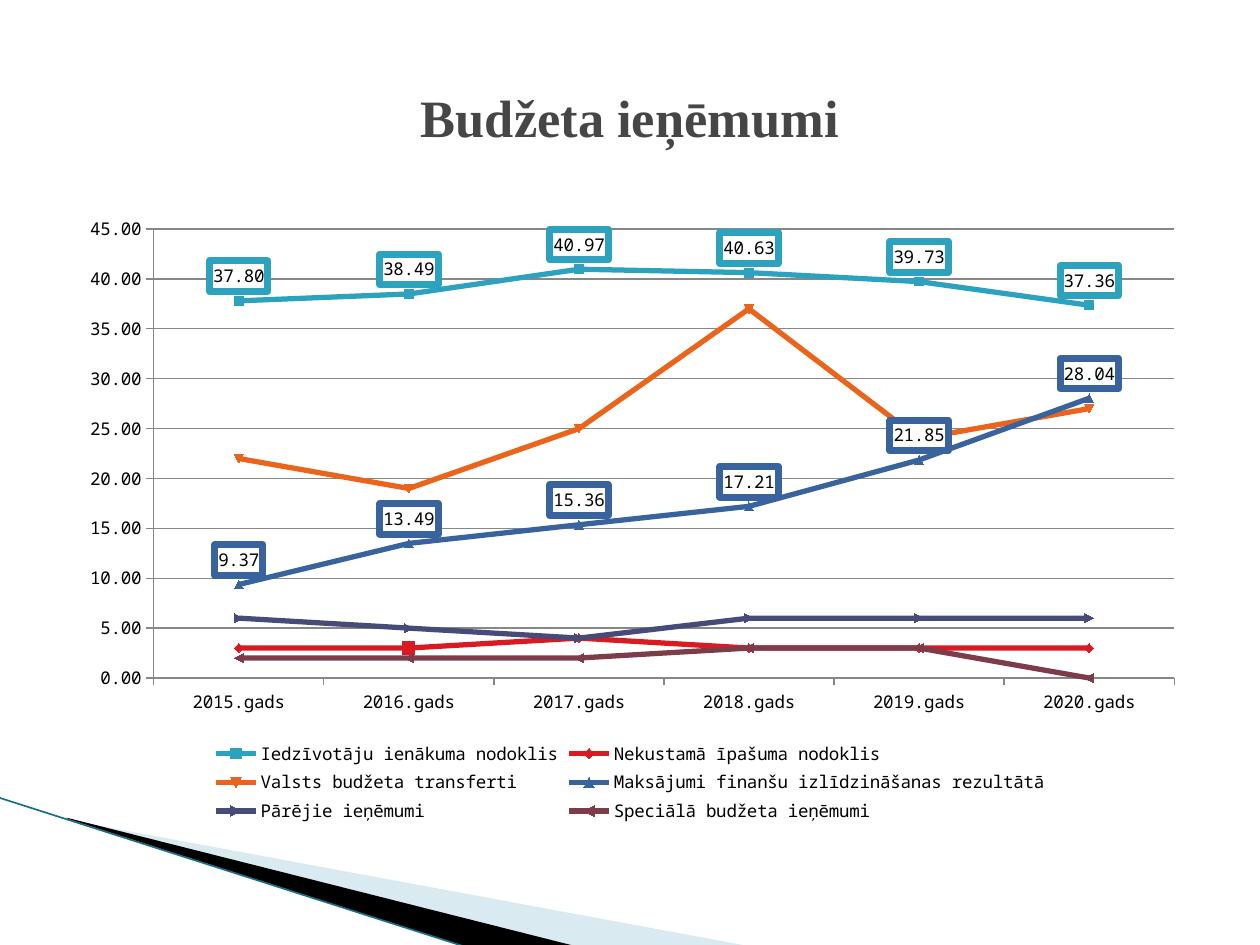
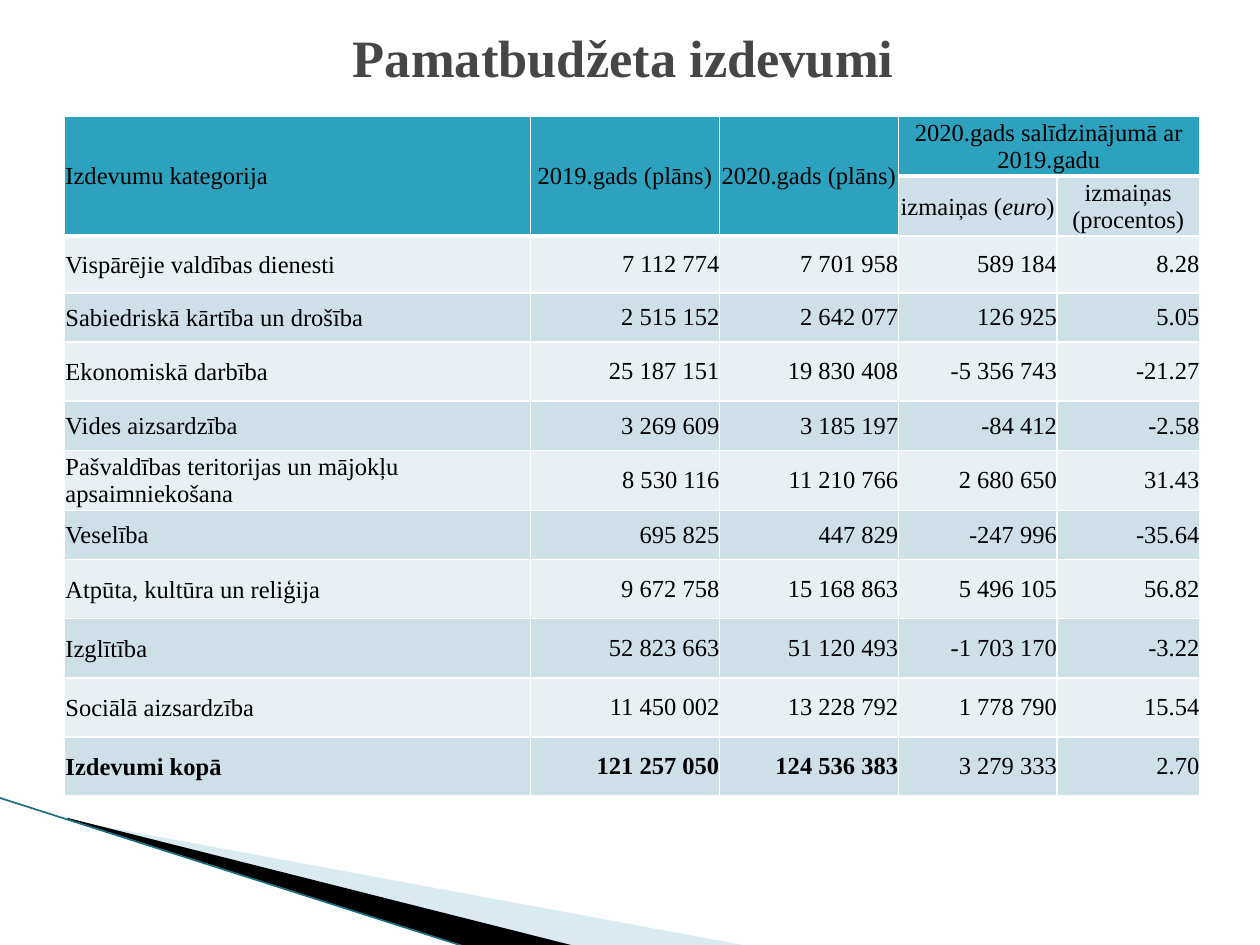
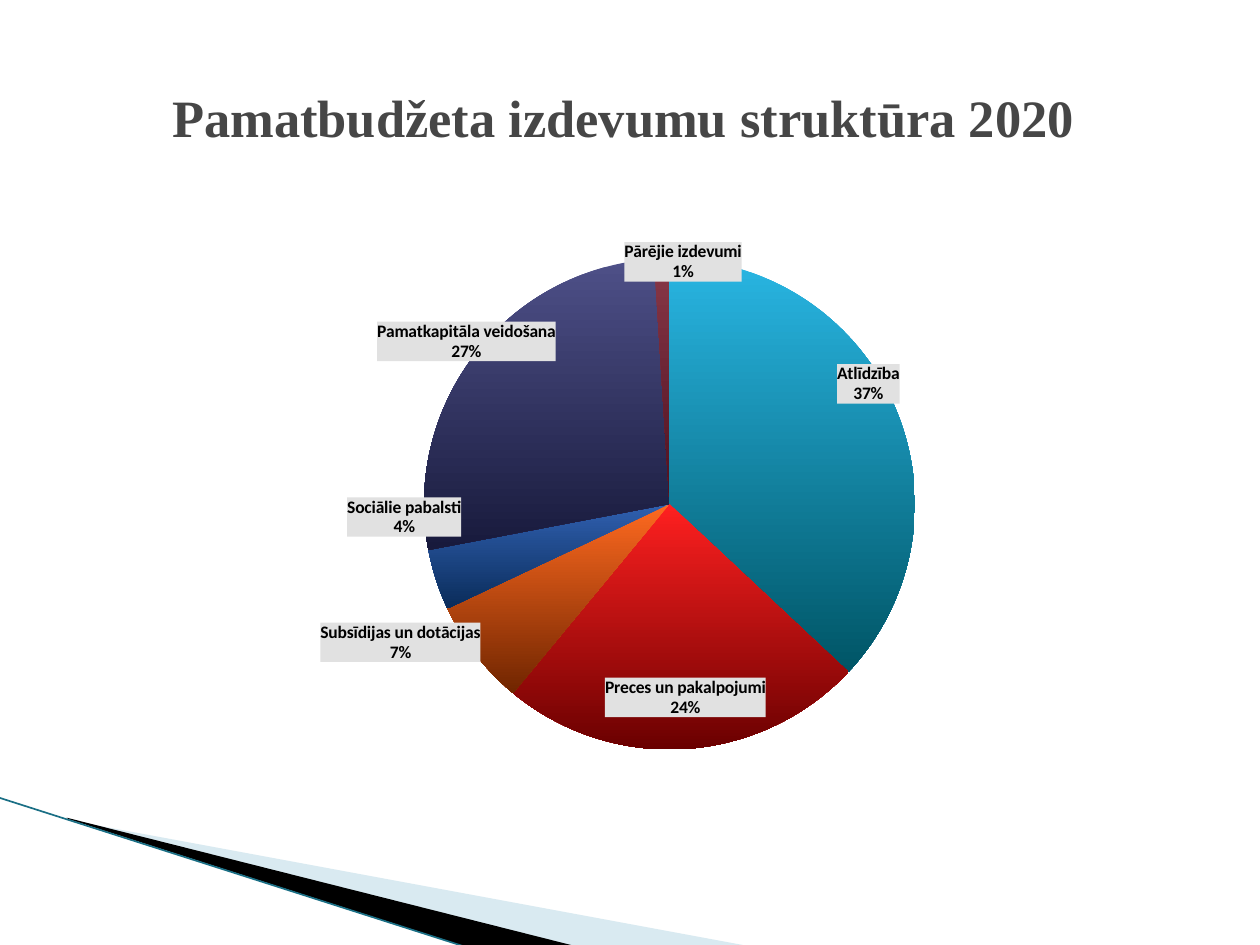
from copy import deepcopy
from dataclasses import dataclass

from lxml.etree import SubElement
from pptx import Presentation
from pptx.chart.data import CategoryChartData as ChartData
from pptx.dml.color import RGBColor
from pptx.enum.chart import XL_CHART_TYPE as Kind
from pptx.enum.chart import XL_LABEL_POSITION as Spot
from pptx.enum.chart import XL_LEGEND_POSITION as Legend
from pptx.enum.chart import XL_MARKER_STYLE as Mark
from pptx.enum.chart import XL_TICK_MARK as Tick
from pptx.enum.shapes import MSO_CONNECTOR as Link
from pptx.enum.text import MSO_ANCHOR as Anchor
from pptx.enum.text import PP_ALIGN as Align
from pptx.oxml import parse_xml
from pptx.oxml.ns import nsdecls, qn
from pptx.util import Pt

PX = 9144  # one hundredth of an inch
SERIF, MONO, SANS = "Times New Roman", "Noto Sans Mono", "Calibri"
BLACK, WHITE, GREY, DARK = "000000", "FFFFFF", "878787", "464646"
TEAL, PALE, ICE = "2DA2BF", "CDE0E8", "E8F0F4"


@dataclass
class Band:
    dots: list[tuple[int, int]]
    color: str
    alpha: int = 100


@dataclass
class Trend:
    name: str
    vals: list[float]
    color: str
    shown: bool = False


@dataclass
class Slice:
    name: str
    share: int
    top: str
    base: str
    shift: tuple[float, float]  # label offset as a share of the chart


BANDS = [
    Band([(55, 651), (595, 751), (456, 751), (55, 650)], "A0CBDC", 40),
    Band([(53, 649), (457, 751), (372, 752), (54, 650)], BLACK),
]

YEARS = [f"{year}.gads" for year in range(2015, 2021)]
TRENDS = [
    Trend("Iedzīvotāju ienākuma nodoklis",
          [37.8, 38.49, 40.97, 40.63, 39.73, 37.36], TEAL, True),
    Trend("Nekustamā īpašuma nodoklis", [3, 3, 4, 3, 3, 3], "DA1A23"),
    Trend("Valsts budžeta transferti", [22, 19, 25, 37, 24, 27], "EB641B"),
    Trend("Maksājumi finanšu izlīdzināšanas rezultātā",
          [9.37, 13.49, 15.36, 17.21, 21.85, 28.04], "39639D", True),
    Trend("Pārējie ieņēmumi ", [6, 5, 4, 6, 6, 6], "474B78"),
    Trend("Speciālā budžeta ieņēmumi ", [2, 2, 2, 3, 3, 0], "7D3C4A"),
]

WIDTHS = [370, 150, 142, 126, 113]
HEIGHTS = [31, 39, 45, 39, 47, 39, 45, 39, 47, 47, 47, 47]
ROWS = [
    ["Izdevumu kategorija", "2019.gads (plāns)", "2020.gads (plāns)",
     "2020.gads salīdzinājumā ar 2019.gadu", ""],
    ["", "", "", "izmaiņas (euro)", "izmaiņas (procentos)"],
    ["Vispārējie valdības dienesti", "7 112 774", "7 701 958", "589 184", "8.28"],
    ["Sabiedriskā kārtība un drošība", "2 515 152", "2 642 077", "126 925", "5.05"],
    ["Ekonomiskā darbība", "25 187 151", "19 830 408", "-5 356 743", "-21.27"],
    ["Vides aizsardzība", "3 269 609", "3 185 197", "-84 412", "-2.58"],
    ["Pašvaldības teritorijas un mājokļu apsaimniekošana",
     "8 530 116", "11 210 766", "2 680 650", "31.43"],
    ["Veselība", "695 825", "447 829", "-247 996", "-35.64"],
    ["Atpūta, kultūra un reliģija", "9 672 758", "15 168 863", "5 496 105", "56.82"],
    ["Izglītība", "52 823 663", "51 120 493", "-1 703 170", "-3.22"],
    ["Sociālā aizsardzība", "11 450 002", "13 228 792", "1 778 790", "15.54"],
    ["Izdevumi kopā", "121 257 050", "124 536 383", "3 279 333", "2.70"],
]

SLICES = [
    Slice("Atlīdzība", 37, "29B6E3", "005566", (-0.06, 0)),
    Slice("Preces un pakalpojumi", 24, "FF2020", "6A0000", (0, -0.13)),
    Slice("Subsīdijas un dotācijas", 7, "FF6A20", "702500", (0.01, -0.06)),
    Slice("Sociālie pabalsti", 4, "3060B0", "0A2C5A", (0.03, -0.14)),
    Slice("Pamatkapitāla veidošana", 27, "4E5088", "181A3C", (0.08, 0.02)),
    Slice("Pārējie izdevumi", 1, "8A3848", "4A1020", (0.02, 0.05)),
]


def rgb(code: str) -> RGBColor:
    return RGBColor.from_string(code)


def px(*nums: int) -> list[int]:
    return [num * PX for num in nums]


def style(font, face: str, size: int, color: str, bold: bool = False) -> None:
    font.name, font.size, font.bold = face, Pt(size), bold
    font.color.rgb = rgb(color)


def start(deck, title: str, high: int = 125):
    """Add a slide with the corner bands and a title of the given height."""
    slide = deck.slides.add_slide(deck.slide_layouts[6])
    for band in BANDS:
        pen = slide.shapes.build_freeform(*band.dots[0], scale=PX)
        pen.add_line_segments(band.dots[1:])
        shape = pen.convert_to_shape()
        shape.shadow.inherit = False
        shape.fill.solid()
        shape.fill.fore_color.rgb = rgb(band.color)
        shape.line.fill.background()
        if band.alpha < 100:
            tint = shape._element.spPr.find(".//" + qn("a:srgbClr"))
            SubElement(tint, qn("a:alpha"), val=str(band.alpha * 1000))
    edge = slide.shapes.add_connector(Link.STRAIGHT, *px(-1, 633, 371, 752))
    edge.line.color.rgb = rgb("1A6F85")
    edge.line.width = Pt(0.95)
    SubElement(edge._element.spPr, qn("a:effectLst"))

    frame = slide.shapes.add_textbox(*px(50, 30, 900, high)).text_frame
    frame.word_wrap = True
    frame.vertical_anchor = Anchor.MIDDLE
    frame.text = title
    para = frame.paragraphs[0]
    para.alignment = Align.CENTER
    style(para.runs[0].font, SERIF, 30, DARK, True)
    return slide


def place(x: float, y: float, size: tuple[float, float] | None = None):
    """Make a manual chart layout; size is given for a plot area only."""
    items = [("x", x), ("y", y)]
    if size:
        items = [("layoutTarget", "inner"), ("xMode", "edge"), ("yMode", "edge"),
                 *items, ("w", size[0]), ("h", size[1])]
    body = "".join(f'<c:{tag} val="{val}"/>' for tag, val in items)
    return parse_xml(f'<c:layout {nsdecls("c")}><c:manualLayout>{body}'
                     "</c:manualLayout></c:layout>")


def add_plot(slide, kind, box: list[int], data, face: str, area):
    chart = slide.shapes.add_chart(kind, *box, data).chart
    chart.has_title = False
    style(chart.font, face, 10, BLACK)
    plot = chart._chartSpace.find(".//" + qn("c:plotArea"))
    for old in plot.findall(qn("c:layout")):
        plot.remove(old)
    plot.insert(0, area)
    return chart


def add_labels(series, face: str, fmt: str, spot, fill: str,
               edge: str = "", bold: bool = False):
    """Turn on filled, optionally framed, data labels."""
    labels = series.data_labels
    labels.show_value = True
    labels.number_format = fmt
    labels.number_format_is_linked = False
    labels.position = spot
    style(labels.font, face, 10, BLACK, bold)
    paint = '<a:solidFill><a:srgbClr val="{}"/></a:solidFill>'.format
    line = f'<a:ln w="{Pt(4)}">{paint(edge)}</a:ln>' if edge else ""
    box = parse_xml(f'<c:spPr {nsdecls("c", "a")}>{paint(fill)}{line}</c:spPr>')
    labels._element.find(qn("c:numFmt")).addnext(box)
    return labels


def add_trends(slide) -> None:
    data = ChartData(number_format="0.00")
    data.categories = YEARS
    for trend in TRENDS:
        data.add_series(trend.name, trend.vals)
    chart = add_plot(slide, Kind.LINE_MARKERS, px(50, 162, 900, 495), data, MONO,
                     place(0.08, 0.04, (0.9, 0.72)))
    chart.has_legend = True
    chart.legend.position = Legend.BOTTOM
    chart.legend.include_in_layout = False

    axis = chart.value_axis
    axis.minimum_scale, axis.maximum_scale, axis.major_unit = 0, 45, 5
    axis.tick_labels.number_format = "0.00"
    axis.tick_labels.number_format_is_linked = False
    axis.has_major_gridlines = True
    axis.major_gridlines.format.line.color.rgb = rgb(GREY)
    for axis in (chart.value_axis, chart.category_axis):
        axis.major_tick_mark = Tick.OUTSIDE
        axis.format.line.color.rgb = rgb(GREY)

    plot = chart.plots[0]
    plot.vary_by_categories = False
    for trend, series in zip(TRENDS, plot.series):
        series.smooth = False
        series.format.line.color.rgb = rgb(trend.color)
        series.format.line.width = Pt(3)
        series.marker.size = 5
        if trend.shown:
            add_labels(series, MONO, "0.00", Spot.ABOVE, WHITE, trend.color)

    # The 2016 property tax point has a larger square marker.
    point = plot.series[1].points[1]
    point.marker.style, point.marker.size = Mark.SQUARE, 7
    for look in (point.marker.format, point.format):
        look.line.color.rgb = rgb(TRENDS[1].color)
    point.format.line.width = Pt(3)
    point.marker.format.fill.solid()
    point.marker.format.fill.fore_color.rgb = rgb(TRENDS[1].color)


def frame_cell(cell, base: int) -> None:
    """Draw white borders; base is the bottom width in points."""
    props = cell._tc.get_or_add_tcPr()
    for spot, (side, wide) in enumerate(zip("LRTB", (1, 1, 1, base))):
        props.insert(spot, parse_xml(
            f'<a:ln{side} {nsdecls("a")} w="{Pt(wide)}"><a:solidFill>'
            f'<a:srgbClr val="{WHITE}"/></a:solidFill></a:ln{side}>'))


def fill_cell(cell, text: str, row: int, col: int) -> None:
    head = row == 0 or (row == 1 and col < 3)
    cell.fill.solid()
    cell.fill.fore_color.rgb = rgb(TEAL if head else (ICE, PALE)[row % 2])
    frame_cell(cell, 3 if head else 1)
    cell.vertical_anchor = Anchor.MIDDLE
    inset = PX if row < 2 or col == 0 else 0
    cell.margin_left = cell.margin_right = cell.margin_top = inset
    cell.margin_bottom = 0
    para = cell.text_frame.paragraphs[0]
    for piece in filter(None, text.partition("euro")):
        run = para.add_run()
        run.text = piece
        style(run.font, SERIF, 14, BLACK, row == len(ROWS) - 1 and col < 3)
        run.font.italic = piece == "euro"
    if col:
        para.alignment = Align.CENTER if row < 2 else Align.RIGHT


def add_costs(slide) -> None:
    table = slide.shapes.add_table(
        len(ROWS), len(WIDTHS), *px(51, 92, sum(WIDTHS), sum(HEIGHTS))).table
    table.first_row = table.horz_banding = False
    for col, wide in zip(table.columns, WIDTHS):
        col.width = wide * PX
    for row, high in zip(table.rows, HEIGHTS):
        row.height = high * PX
    for row, texts in enumerate(ROWS):
        for col, text in enumerate(texts):
            fill_cell(table.cell(row, col), text, row, col)
    for col in range(3):
        table.cell(0, col).merge(table.cell(1, col))
    table.cell(0, 3).merge(table.cell(0, 4))


def add_pie(slide) -> None:
    data = ChartData()
    data.categories = [item.name for item in SLICES]
    data.add_series("Series 1", [item.share for item in SLICES])
    chart = add_plot(slide, Kind.PIE, px(50, 162, 852, 481), data, SANS,
                     place(0.15, 0.09, (0.83, 0.81)))
    chart.has_legend = False
    chart.plots[0].vary_by_categories = True
    series = chart.plots[0].series[0]
    labels = add_labels(series, SANS, "0%", Spot.OUTSIDE_END, "E1E1E1", bold=True)
    labels.show_value = False
    labels.show_category_name = labels.show_percentage = True

    root = labels._element
    for old in root.findall(qn("c:showLeaderLines")):
        root.remove(old)
    SubElement(root, qn("c:separator")).text = "\n"
    shared = list(root)
    for index, item in enumerate(SLICES):
        fill = series.points[index].format.fill
        fill.gradient()
        fill.gradient_angle = 270
        for stop, code in zip(fill.gradient_stops, (item.top, item.base)):
            stop.color.rgb = rgb(code)
        label = parse_xml(f'<c:dLbl {nsdecls("c")}><c:idx val="{index}"/></c:dLbl>')
        label.append(place(*item.shift))
        label.extend(deepcopy(node) for node in shared)
        root.insert(index, label)
    SubElement(root, qn("c:showLeaderLines"), val="0")


def main() -> None:
    deck = Presentation()
    deck.slide_width, deck.slide_height = px(1000, 750)
    add_trends(start(deck, "Budžeta ieņēmumi"))
    add_costs(start(deck, "Pamatbudžeta izdevumi ", 30))
    add_pie(start(deck, "Pamatbudžeta izdevumu struktūra 2020 "))
    deck.save("out.pptx")


if __name__ == "__main__":
    main()
